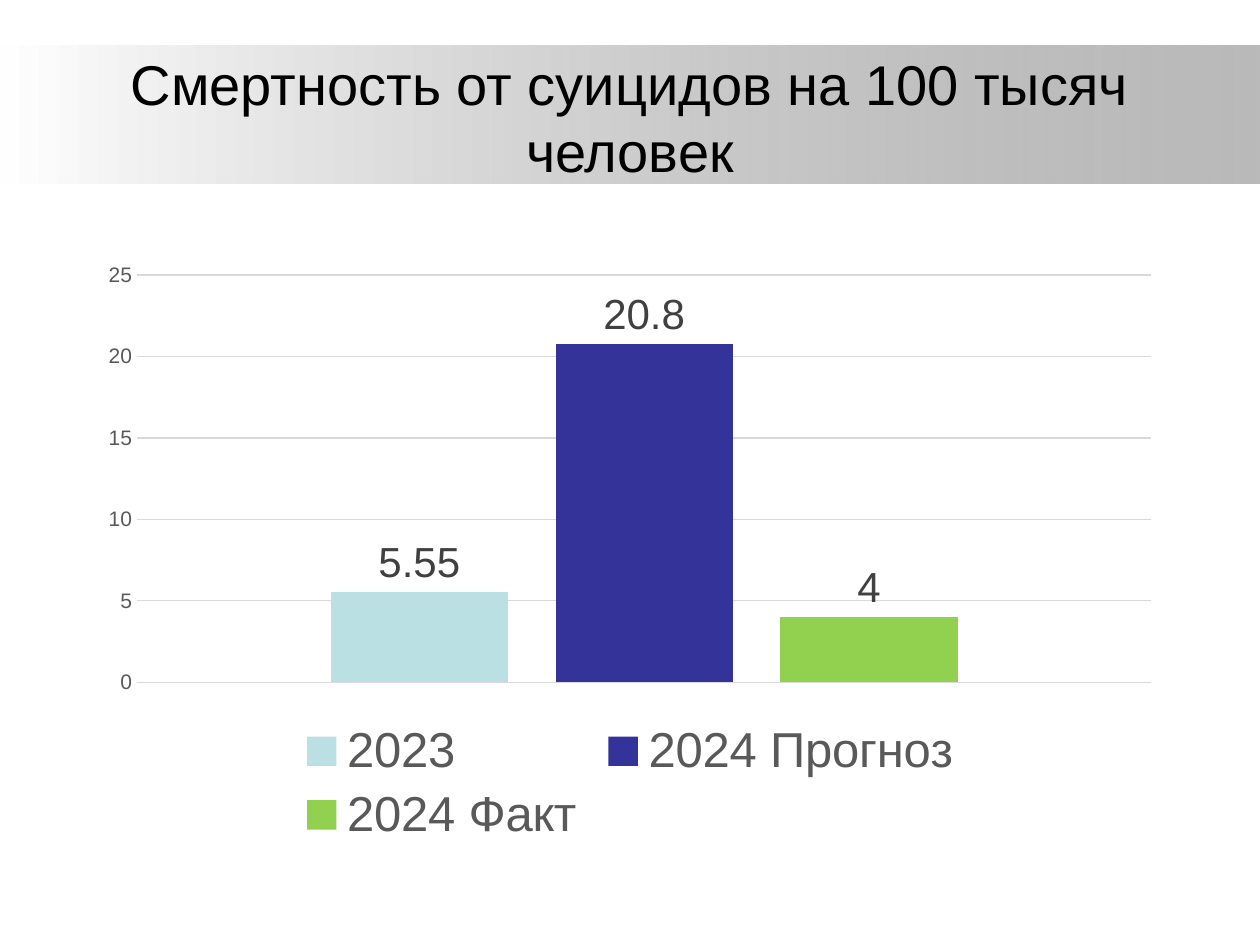
"""Build the slide on suicide mortality per 100 thousand people."""
from dataclasses import dataclass

from lxml.etree import SubElement
from pptx import Presentation
from pptx.chart.data import CategoryChartData
from pptx.dml.color import RGBColor
from pptx.enum.chart import (XL_CHART_TYPE, XL_LABEL_POSITION,
                             XL_LEGEND_POSITION, XL_TICK_MARK)
from pptx.enum.shapes import MSO_SHAPE
from pptx.enum.text import MSO_ANCHOR, PP_ALIGN
from pptx.oxml.ns import qn
from pptx.util import Inches, Pt


@dataclass(frozen=True)
class Theme:
    font: str = "Arial"
    title_size: int = 32
    legend_size: int = 28
    label_size: int = 24
    axis_size: int = 12
    text: str = "000000"
    muted: str = "595959"
    label: str = "404040"
    grid: str = "D9D9D9"
    band_start: str = "FFFFFF"
    band_end: str = "808080"
    band_end_alpha: int = 54
    series: tuple = ("BBE0E3", "333399", "92D050")


class SlideBuilder:
    def __init__(self, slide, theme):
        self.slide = slide
        self.theme = theme

    def style(self, font, size, color):
        font.name = self.theme.font
        font.size = Pt(size)
        font.color.rgb = RGBColor.from_string(color)

    def band(self, *box):
        band = self.slide.shapes.add_shape(MSO_SHAPE.RECTANGLE, *map(Inches, box))
        band.shadow.inherit = False
        band.line.fill.background()
        band.fill.gradient()
        band.fill.gradient_angle = 0
        colors = (self.theme.band_start, self.theme.band_end)
        for stop, color in zip(band.fill.gradient_stops, colors):
            stop.color.rgb = RGBColor.from_string(color)
        end_color = list(band._element.spPr.iter(qn("a:srgbClr")))[-1]
        SubElement(end_color, qn("a:alpha"), val=str(self.theme.band_end_alpha * 1000))
        self.slide.shapes._spTree.insert(2, band._element)

    def title(self, wording, *box):
        title = self.slide.shapes.title
        title.left, title.top, title.width, title.height = map(Inches, box)
        title.text_frame.text = wording
        title.text_frame.word_wrap = True
        title.text_frame.vertical_anchor = MSO_ANCHOR.MIDDLE
        heading = title.text_frame.paragraphs[0]
        heading.alignment = PP_ALIGN.CENTER
        self.style(heading.font, self.theme.title_size, self.theme.text)

    def column_chart(self, rates, *box):
        data = CategoryChartData()
        data.categories = ["1"]
        for name, rate in rates.items():
            data.add_series(name, [rate])
        chart = self.slide.shapes.add_chart(
            XL_CHART_TYPE.COLUMN_CLUSTERED, *map(Inches, box), data).chart
        chart.has_title = False
        self.style(chart.font, 10, self.theme.text)
        self.axes(chart)
        self.legend(chart)
        self.columns(chart.plots[0])

    def axes(self, chart):
        chart.category_axis.visible = False
        scale = chart.value_axis
        scale.minimum_scale, scale.maximum_scale, scale.major_unit = 0, 25, 5
        scale.major_tick_mark = scale.minor_tick_mark = XL_TICK_MARK.NONE
        scale.format.line.fill.background()
        grid = scale.major_gridlines.format.line
        grid.width = Pt(0.75)
        grid.color.rgb = RGBColor.from_string(self.theme.grid)
        self.style(scale.tick_labels.font, self.theme.axis_size, self.theme.muted)

    def legend(self, chart):
        chart.has_legend = True
        chart.legend.position = XL_LEGEND_POSITION.BOTTOM
        chart.legend.include_in_layout = False
        self.style(chart.legend.font, self.theme.legend_size, self.theme.muted)

    def columns(self, plot):
        plot.vary_by_categories = False
        plot.gap_width, plot.overlap = 219, -27
        for column, color in zip(plot.series, self.theme.series):
            column.format.fill.solid()
            column.format.fill.fore_color.rgb = RGBColor.from_string(color)
            column.invert_if_negative = False
            labels = column.data_labels
            labels.show_value = True
            labels.position = XL_LABEL_POSITION.OUTSIDE_END
            self.style(labels.font, self.theme.label_size, self.theme.label)


def main():
    deck = Presentation()
    deck.slide_width, deck.slide_height = Inches(10), Inches(7.5)
    builder = SlideBuilder(deck.slides.add_slide(deck.slide_layouts[5]), Theme())
    builder.band(0, 0.36, 10, 1.1)
    builder.title("Смертность от суицидов на 100 тысяч человек", 0.5, 0.3, 9, 1.25)
    rates = {"2023": 5.55, "2024 Прогноз": 20.8, "2024 Факт": 4}
    builder.column_chart(rates, 0.69, 2, 8.62, 4.76)
    deck.save("out.pptx")


if __name__ == "__main__":
    main()
